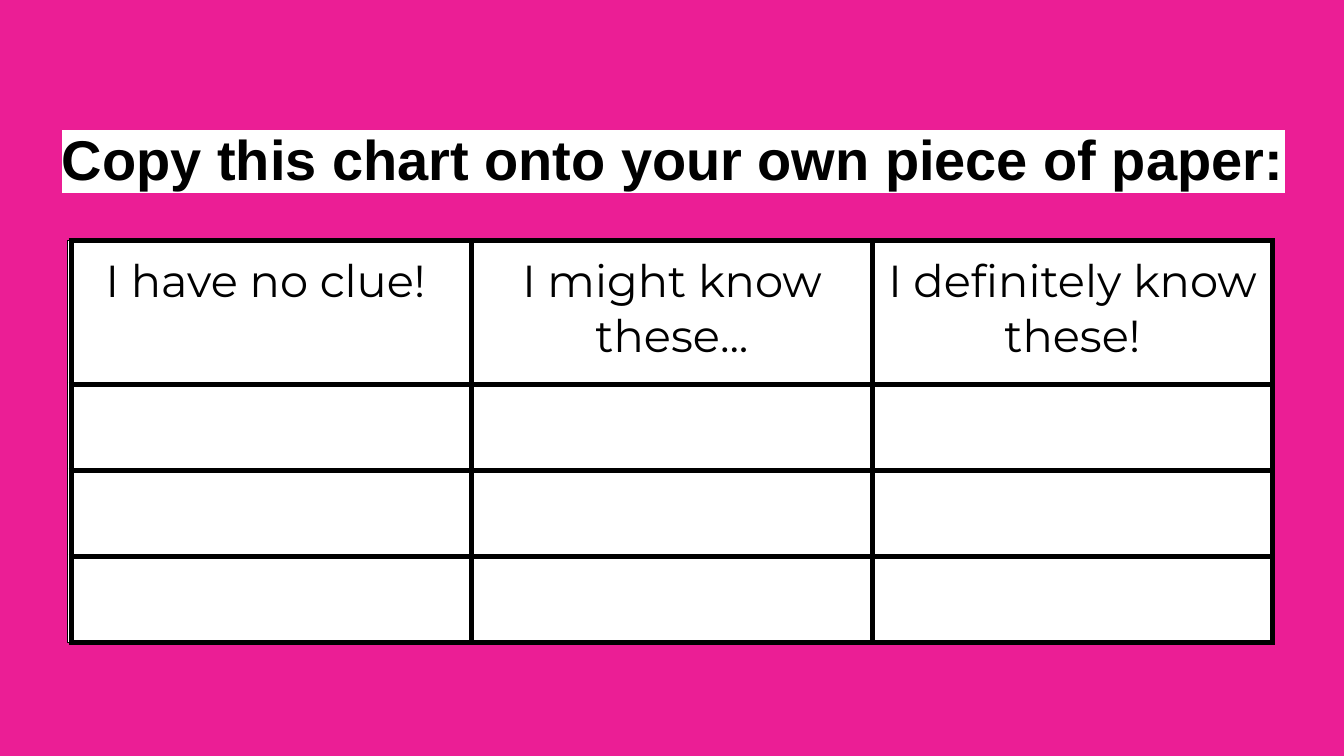
from dataclasses import dataclass

import lxml.etree
import pptx
import pptx.dml.color
import pptx.enum.shapes
import pptx.enum.text
import pptx.oxml.ns
import pptx.util

Inches = pptx.util.Inches
Pt = pptx.util.Pt
qn = pptx.oxml.ns.qn


@dataclass(frozen=True)
class Theme:
    pink: str = "EB1E95"
    white: str = "FFFFFF"
    black: str = "000000"
    title_font: str = "Arial"
    header_font: str = "Montserrat"
    title_size: int = 30
    header_size: int = 24
    grid_width: int = 3
    panel_line: float = 0.75
    inset: float = 0.1


@dataclass(frozen=True)
class Area:
    left: float
    top: float
    width: float
    height: float

    def lengths(self) -> list[int]:
        return [Inches(v) for v in (self.left, self.top, self.width, self.height)]


THEME = Theme()
SLIDE_WIDTH = 10
SLIDE_HEIGHT = SLIDE_WIDTH * 9 / 16
TITLE = "Copy this chart onto your own piece of paper:"
HEADERS = ("I have no clue! ", "I might know these...", "I definitely know these!")
COLUMN_WIDTH = 2.98
ROW_HEIGHTS = (1.07, 0.64, 0.64, 0.64)
TITLE_AREA = Area(0.23, 0.83, 9.56, 0.77)
PANEL_AREA = Area(0.5, 1.79, 8.98, 2.99)
TABLE_AREA = Area(0.53, 1.79, COLUMN_WIDTH * len(HEADERS), sum(ROW_HEIGHTS))


def rgb(value: str) -> pptx.dml.color.RGBColor:
    return pptx.dml.color.RGBColor.from_string(value)


def set_insets(target) -> None:
    for side in ("left", "right", "top", "bottom"):
        setattr(target, f"margin_{side}", Inches(THEME.inset))


def add_centred_run(para, text: str, font: str, size: int, bold: bool = False):
    para.alignment = pptx.enum.text.PP_ALIGN.CENTER
    span = para.add_run()
    span.text = text
    span.font.name = font
    span.font.size = Pt(size)
    span.font.bold = bold
    span.font.color.rgb = rgb(THEME.black)
    return span


def highlight(span, color: str) -> None:
    mark = lxml.etree.Element(qn("a:highlight"))
    lxml.etree.SubElement(mark, qn("a:srgbClr"), val=color)
    span.font._element.find(qn("a:solidFill")).addnext(mark)


def add_borders(cell) -> None:
    properties = cell._tc.get_or_add_tcPr()
    for position, side in enumerate(("lnL", "lnR", "lnT", "lnB")):
        line = lxml.etree.Element(qn(f"a:{side}"), w=str(Pt(THEME.grid_width)))
        fill = lxml.etree.SubElement(line, qn("a:solidFill"))
        lxml.etree.SubElement(fill, qn("a:srgbClr"), val=THEME.black)
        properties.insert(position, line)


def add_title(page) -> None:
    box = page.shapes.add_textbox(*TITLE_AREA.lengths())
    frame = box.text_frame
    frame.word_wrap = True
    frame.vertical_anchor = pptx.enum.text.MSO_ANCHOR.TOP
    set_insets(frame)
    span = add_centred_run(
        frame.paragraphs[0], TITLE, THEME.title_font, THEME.title_size, bold=True
    )
    highlight(span, THEME.white)


def add_panel(page) -> None:
    panel = page.shapes.add_shape(
        pptx.enum.shapes.MSO_SHAPE.RECTANGLE, *PANEL_AREA.lengths()
    )
    panel.shadow.inherit = False
    panel.fill.solid()
    panel.fill.fore_color.rgb = rgb(THEME.white)
    panel.line.color.rgb = rgb(THEME.black)
    panel.line.width = Pt(THEME.panel_line)


def add_chart_table(page) -> None:
    table = page.shapes.add_table(
        len(ROW_HEIGHTS), len(HEADERS), *TABLE_AREA.lengths()
    ).table
    table.first_row = False
    table.horz_banding = False
    for column in table.columns:
        column.width = Inches(COLUMN_WIDTH)
    for row, height in zip(table.rows, ROW_HEIGHTS):
        row.height = Inches(height)
    for cell in table.iter_cells():
        cell.fill.background()
        set_insets(cell)
        add_borders(cell)
    for cell, header in zip(table.rows[0].cells, HEADERS):
        add_centred_run(
            cell.text_frame.paragraphs[0], header, THEME.header_font, THEME.header_size
        )


def main() -> None:
    deck = pptx.Presentation()
    deck.slide_width = Inches(SLIDE_WIDTH)
    deck.slide_height = Inches(SLIDE_HEIGHT)
    page = deck.slides.add_slide(deck.slide_layouts[6])
    page.background.fill.solid()
    page.background.fill.fore_color.rgb = rgb(THEME.pink)
    add_panel(page)
    add_chart_table(page)
    add_title(page)
    deck.save("out.pptx")


if __name__ == "__main__":
    main()
